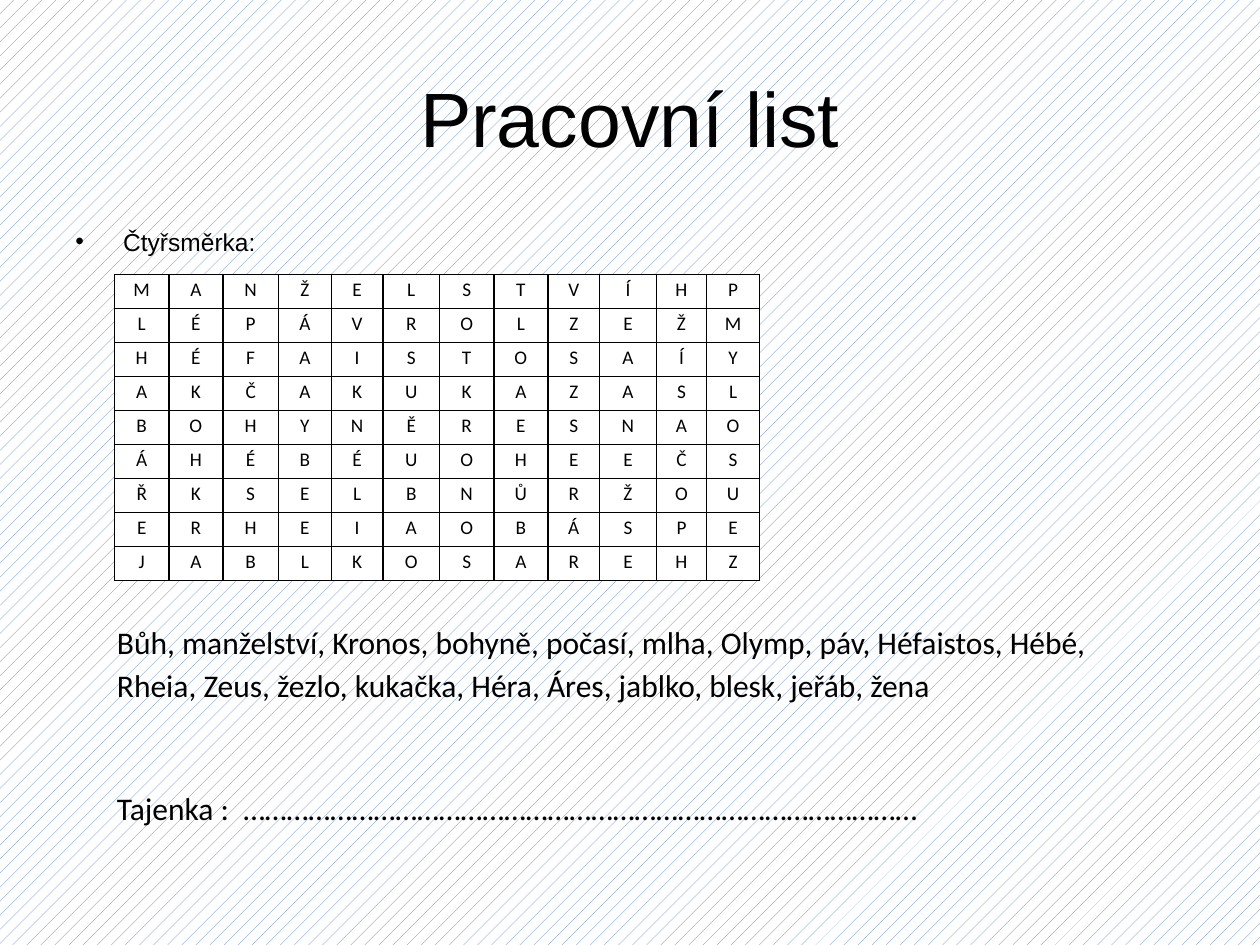
import pptx
import pptx.dml.color
import pptx.enum.dml
import pptx.enum.text
import pptx.oxml
import pptx.oxml.ns
import pptx.util

Inches, Pt = pptx.util.Inches, pptx.util.Pt
ALIGN = pptx.enum.text.PP_ALIGN
ANCHOR = pptx.enum.text.MSO_ANCHOR

COLORS = {"text": "000000", "paper": "FFFFFF", "pattern": "4F81BD"}
LETTERS = [
    "MANŽELSTVÍHP",
    "LÉPÁVROLZEŽM",
    "HÉFAISTOSAÍY",
    "AKČAKUKAZASL",
    "BOHYNĚRESNAO",
    "ÁHÉBÉUOHEEČS",
    "ŘKSELBNŮRŽOU",
    "ERHEIAOBÁSPE",
    "JABLKOSAREHZ",
]
COLUMN_WIDTHS = [0.43, 0.43, 0.44, 0.42, 0.41, 0.45, 0.43, 0.43, 0.41, 0.45, 0.4, 0.42]
ROW_HEIGHT = 0.27
WORDS = ("Bůh, manželství, Kronos, bohyně, počasí, mlha, Olymp, páv, Héfaistos, Hébé, "
         "Rheia, Zeus, žezlo, kukačka, Héra, Áres, jablko, blesk, jeřáb, žena")
ANSWER = "Tajenka :  …………………………………………………………………………………"


def rgb(name):
    return pptx.dml.color.RGBColor.from_string(COLORS[name])


class Worksheet:
    """Style and current slide."""

    heading_font = "Arial"
    body_font = "Calibri"

    def __init__(self, slide):
        self.slide = slide

    def background(self):
        fill = self.slide.background.fill
        fill.patterned()
        fill.pattern = pptx.enum.dml.MSO_PATTERN.PERCENT_10
        fill.fore_color.rgb = rgb("pattern")
        fill.back_color.rgb = rgb("paper")

    def format(self, p, font, size, align=ALIGN.LEFT, spacing=None):
        p.alignment = align
        p.line_spacing = spacing
        for r in p.runs:
            r.font.name = font
            r.font.size = Pt(size)
            r.font.color.rgb = rgb("text")

    def text(self, box, paragraphs, font, size, anchor=ANCHOR.TOP, **style):
        sp = self.slide.shapes.add_textbox(*(Inches(v) for v in box))
        tf = sp.text_frame
        tf.word_wrap = True
        tf.vertical_anchor = anchor
        tf.text = "\n".join(paragraphs)
        for p in tf.paragraphs:
            self.format(p, font, size, **style)
        return tf.paragraphs

    def bullet(self, p, indent):
        pPr = p._p.get_or_add_pPr()
        pPr.set("marL", str(Inches(indent)))
        pPr.set("indent", str(-Inches(indent)))
        ns = pptx.oxml.ns.nsdecls("a")
        pPr.append(pptx.oxml.parse_xml(f'<a:buFont {ns} typeface="Arial"/>'))
        pPr.append(pptx.oxml.parse_xml(f'<a:buChar {ns} char="•"/>'))

    def borders(self, cell, width):
        tcPr = cell._tc.get_or_add_tcPr()
        for i, side in enumerate(("lnL", "lnR", "lnT", "lnB")):
            tcPr.insert(i, pptx.oxml.parse_xml(
                f'<a:{side} {pptx.oxml.ns.nsdecls("a")} w="{Pt(width)}"><a:solidFill>'
                f'<a:srgbClr val="{COLORS["text"]}"/></a:solidFill></a:{side}>'))

    def letter_grid(self, left, top, rows, widths, height):
        table = self.slide.shapes.add_table(
            len(rows), len(widths), Inches(left), Inches(top),
            Inches(sum(widths)), Inches(height * len(rows))).table
        table.first_row = table.horz_banding = False
        for column, width in zip(table.columns, widths):
            column.width = Inches(width)
        for row, letters in zip(table.rows, rows):
            row.height = Inches(height)
            for cell, letter in zip(row.cells, letters):
                cell.margin_left = cell.margin_right = Inches(0.07)
                cell.margin_top = cell.margin_bottom = 0
                cell.fill.solid()
                cell.fill.fore_color.rgb = rgb("paper")
                self.borders(cell, 1)
                p = cell.text_frame.paragraphs[0]
                p.text = letter
                self.format(p, self.body_font, 11, ALIGN.CENTER, 1.15)


def main():
    prs = pptx.Presentation()
    prs.slide_width, prs.slide_height = Inches(10), Inches(7.5)
    s = Worksheet(prs.slides.add_slide(prs.slide_layouts[6]))
    s.background()

    # Title and task label
    s.text((0.5, 0.3, 9, 1.25), ["Pracovní list"], s.heading_font, 44,
           anchor=ANCHOR.MIDDLE, align=ALIGN.CENTER)
    label, = s.text((0.5, 1.75, 9, 4.95), ["Čtyřsměrka:"], s.heading_font, 14)
    label.space_before = Pt(3)
    s.bullet(label, 0.38)

    # Word search
    s.letter_grid(0.91, 2.18, LETTERS, COLUMN_WIDTHS, ROW_HEIGHT)

    # Words to find and the answer line
    words, answer = s.text((0.83, 4.85, 8.19, 2.26), [WORDS, ANSWER],
                           s.body_font, 18, spacing=1.15)
    words.space_after = answer.space_after = Pt(10)
    answer.space_before = Pt(35)

    prs.save("out.pptx")


if __name__ == "__main__":
    main()
